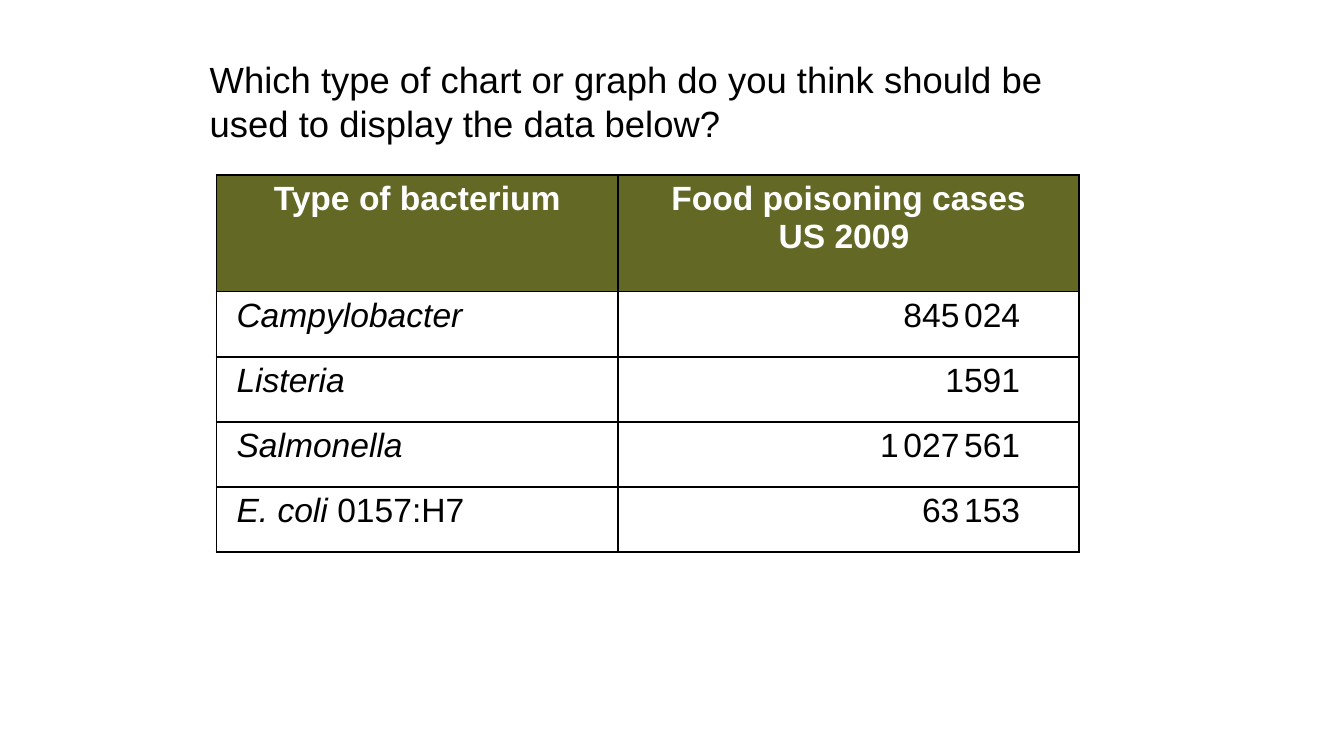
from pptx import Presentation
from pptx.dml.color import RGBColor
from pptx.enum.text import MSO_ANCHOR, MSO_AUTO_SIZE, PP_ALIGN
from pptx.oxml import parse_xml
from pptx.oxml.ns import nsdecls
from pptx.util import Emu, Pt

LEFT, CENTER, RIGHT = PP_ALIGN.LEFT, PP_ALIGN.CENTER, PP_ALIGN.RIGHT
MIDDLE = MSO_ANCHOR.MIDDLE
NO_AUTOFIT = MSO_AUTO_SIZE.NONE
TITLE_ONLY = 5
EMU_PER_PX = 4572
FONT = "Arial"
BLACK, WHITE, OLIVE = "000000", "FFFFFF", "636825"
BODY_SIZE, GAP_SIZE = 18, 9

QUESTION = ("Which type of chart or graph do you think should be "
            "used to display the data below?")
HEADERS = [["Type of bacterium"], ["Food poisoning cases", "US 2009 "]]
CASES = [
    ("Campylobacter", "", "845 024"),
    ("Listeria", "", "1591"),
    ("Salmonella", "", "1 027 561"),
    ("E. coli", " 0157:H7", "63 153"),
]
COLUMN_WIDTHS = [598, 686]
HEADER_HEIGHT, ROW_HEIGHT = 174, 97


def px(length):
    """Turn whole pixels into EMU."""
    return Emu(length * EMU_PER_PX)


def color(code):
    """Turn a hex string into a colour."""
    return RGBColor.from_string(code)


def add_span(para, text, size=BODY_SIZE, ink=BLACK, bold=False, italic=False):
    """Add one formatted run to a paragraph."""
    span = para.add_run()
    span.text = text
    font = span.font
    font.name, font.size = FONT, Pt(size)
    font.bold, font.italic = bold, italic
    font.color.rgb = color(ink)


def add_question(page):
    """Place and fill the title."""
    box = page.shapes.title
    box.left, box.top, box.width, box.height = px(292), px(73), px(1346), px(154)
    frame = box.text_frame
    frame.word_wrap = True
    frame.auto_size = NO_AUTOFIT
    frame.vertical_anchor = MIDDLE
    para = frame.paragraphs[0]
    para.alignment = LEFT
    para.line_spacing = 1.0
    add_span(para, QUESTION, 19.5)


def style_cell(cell, fill, align, left=14, right=14):
    """Set borders, fill and margins, and return the cell's paragraph."""
    properties = cell._tc.get_or_add_tcPr()
    for side in "LRTB":
        properties.append(parse_xml(
            f'<a:ln{side} {nsdecls("a")} w="{Pt(1)}"><a:solidFill>'
            f'<a:srgbClr val="{BLACK}"/></a:solidFill></a:ln{side}>'))
    cell.fill.solid()
    cell.fill.fore_color.rgb = color(fill)
    cell.margin_left, cell.margin_right = px(left), px(right)
    cell.margin_top = cell.margin_bottom = px(8)
    para = cell.text_frame.paragraphs[0]
    para.alignment = align
    return para


def fill_header(cell, lines):
    """Write a column heading with its line breaks."""
    para = style_cell(cell, OLIVE, CENTER)
    for index, line in enumerate(lines):
        if index:
            para.add_line_break()
        add_span(para, line, ink=WHITE, bold=True)


def fill_name(cell, species, strain):
    """Write an italic species name and its upright strain."""
    para = style_cell(cell, WHITE, LEFT, left=30)
    add_span(para, species, italic=True)
    if strain:
        add_span(para, strain)


def fill_count(cell, count):
    """Write a number with narrow gaps between digit groups."""
    para = style_cell(cell, WHITE, RIGHT, right=88)
    for index, digits in enumerate(count.split()):
        if index:
            add_span(para, " ", GAP_SIZE)
        add_span(para, digits)


def add_cases_table(page):
    """Build the table of food poisoning cases."""
    heights = [HEADER_HEIGHT] + [ROW_HEIGHT] * len(CASES)
    table = page.shapes.add_table(
        len(heights), len(COLUMN_WIDTHS), px(322), px(260),
        px(sum(COLUMN_WIDTHS)), px(sum(heights))).table
    table.horz_banding = False
    for column, width in zip(table.columns, COLUMN_WIDTHS):
        column.width = px(width)
    for row, height in zip(table.rows, heights):
        row.height = px(height)
    for index, lines in enumerate(HEADERS):
        fill_header(table.cell(0, index), lines)
    for index, (species, strain, count) in enumerate(CASES, 1):
        fill_name(table.cell(index, 0), species, strain)
        fill_count(table.cell(index, 1), count)


def main():
    """Build and save the deck."""
    deck = Presentation()
    deck.slide_width, deck.slide_height = px(2000), px(1125)
    page = deck.slides.add_slide(deck.slide_layouts[TITLE_ONLY])
    add_question(page)
    add_cases_table(page)
    deck.save("out.pptx")


if __name__ == "__main__":
    main()
